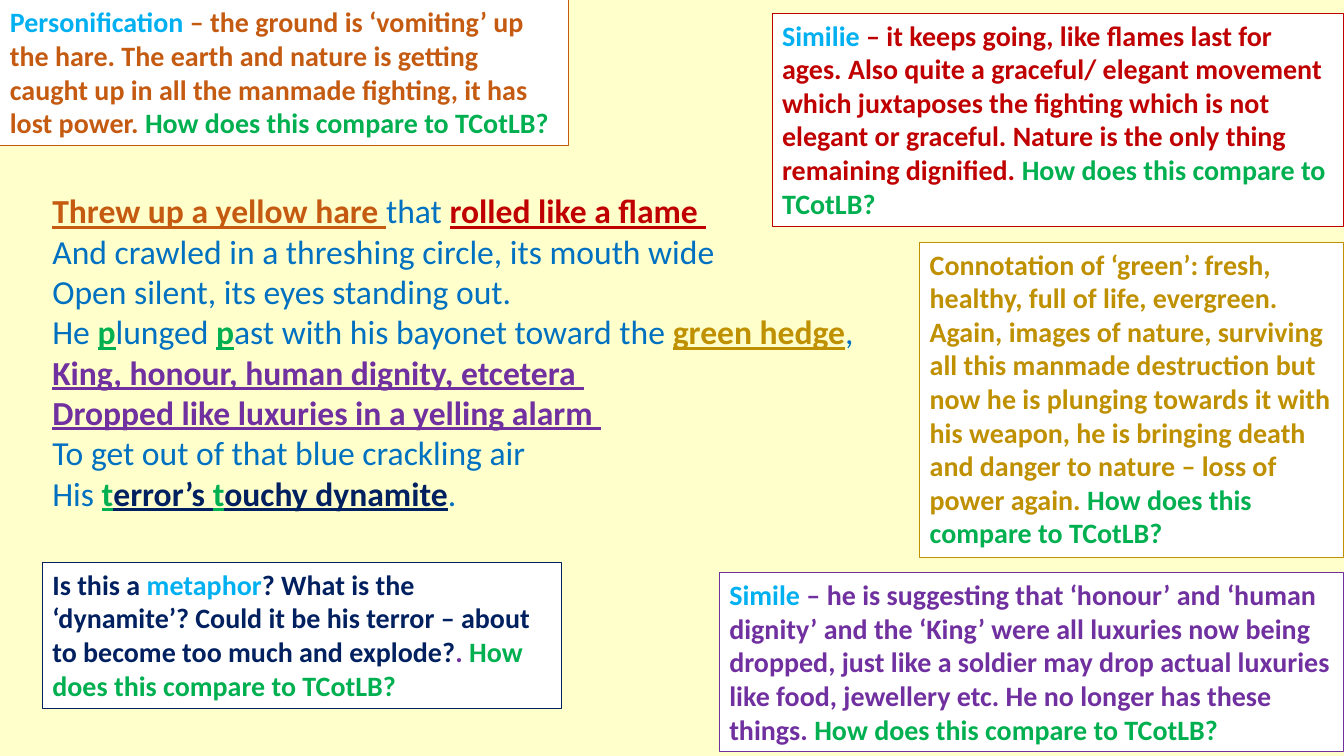
"""Build an annotated poem slide with five commentary boxes."""
from pptx import Presentation
from pptx.dml.color import RGBColor
from pptx.enum.text import MSO_ANCHOR, MSO_AUTO_SIZE
from pptx.util import Cm, Pt

TOP = MSO_ANCHOR.TOP
GROW = MSO_AUTO_SIZE.SHAPE_TO_FIT_TEXT

CREAM = RGBColor(0xFF, 0xFF, 0xCC)
WHITE = RGBColor(0xFF, 0xFF, 0xFF)
BLUE = RGBColor(0x00, 0x70, 0xC0)
SKY = RGBColor(0x00, 0xB0, 0xF0)
GREEN = RGBColor(0x00, 0xB0, 0x50)
ORANGE = RGBColor(0xC5, 0x5A, 0x11)
RED = RGBColor(0xC0, 0x00, 0x00)
GOLD = RGBColor(0xBF, 0x90, 0x00)
PURPLE = RGBColor(0x70, 0x30, 0xA0)
NAVY = RGBColor(0x00, 0x20, 0x60)

QUESTION = ("How does this compare to TCotLB?", GREEN)

POEM = [
    [("Threw up a yellow hare ", ORANGE), ("that ", BLUE), ("rolled like a flame ", RED)],
    [("And crawled in a threshing circle, its mouth wide", BLUE)],
    [("Open silent, its eyes standing out.", BLUE)],
    [("He ", BLUE), ("p", GREEN), ("lunged ", BLUE), ("p", GREEN),
     ("ast with his bayonet toward the ", BLUE), ("green hedge", GOLD), (",", BLUE)],
    [("King, honour, human dignity, etcetera ", PURPLE)],
    [("Dropped like luxuries in a yelling alarm ", PURPLE)],
    [("To get out of that blue crackling air", BLUE)],
    [("His ", BLUE), ("t", GREEN), ("error’s ", NAVY), ("t", GREEN),
     ("ouchy dynamite", NAVY), (".", BLUE)],
]

COMMENTS = [
    ((0, 0, 14.33, 3.66), ORANGE, [
        ("Personification", SKY),
        (" – the ground is ‘vomiting’ up the hare. The earth and nature is getting "
         "caught up in all the manmade fighting, it has lost power. ", ORANGE)]),
    ((19.46, 0.33, 14.4, 5.38), RED, [
        ("Similie", SKY),
        (" – it keeps going, like flames last for ages. Also quite a graceful/ elegant "
         "movement which juxtaposes the fighting which is not elegant or graceful. "
         "Nature is the only thing remaining dignified. ", RED)]),
    ((23.18, 6.1, 10.69, 7.95), GOLD, [
        ("Connotation of ‘green’: fresh, healthy, full of life, evergreen. Again, images "
         "of nature, surviving all this manmade destruction but now he is plunging "
         "towards it with his weapon, he is bringing death and danger to nature – loss "
         "of power again. ", GOLD)]),
    ((18.13, 14.43, 15.74, 4.52), PURPLE, [
        ("Simile", SKY),
        (" – he is suggesting that ‘honour’ and ‘human dignity’ and the ‘King’ were all "
         "luxuries now being dropped, just like a soldier may drop actual luxuries like "
         "food, jewellery etc. He no longer has these things. ", PURPLE)]),
    ((1.07, 14.17, 13.08, 3.68), NAVY, [
        ("Is this a ", NAVY), ("metaphor", SKY),
        ("? What is the ‘dynamite’? Could it be his terror – about to become too much "
         "and explode?", NAVY),
        (". ", PURPLE)]),
]


def add_text(page, area, lines, size, plain=None, underline=False):
    """Add a text box whose spans are bold unless they have the plain colour."""
    box = page.shapes.add_textbox(*[Cm(length) for length in area])
    frame = box.text_frame
    frame.word_wrap = True
    frame.auto_size = GROW
    frame.vertical_anchor = TOP
    for index, line in enumerate(lines):
        para = frame.add_paragraph() if index else frame.paragraphs[0]
        for text, colour in line:
            span = para.add_run()
            span.text = text
            span.font.name = "Calibri"
            span.font.size = Pt(size)
            span.font.color.rgb = colour
            span.font.bold = colour != plain
            span.font.underline = underline and colour != plain
    return box


deck = Presentation()
deck.slide_width = Cm(33.87)
deck.slide_height = Cm(19.05)
page = deck.slides.add_slide(deck.slide_layouts[6])
page.background.fill.solid()
page.background.fill.fore_color.rgb = CREAM

add_text(page, (1.07, 4.67, 22.2, 8.46), POEM, size=24, plain=BLUE, underline=True)

for area, colour, spans in COMMENTS:
    box = add_text(page, area, [spans + [QUESTION]], size=20)
    box.fill.solid()
    box.fill.fore_color.rgb = WHITE
    box.line.color.rgb = colour
    box.line.width = Pt(0.75)

deck.save("out.pptx")
